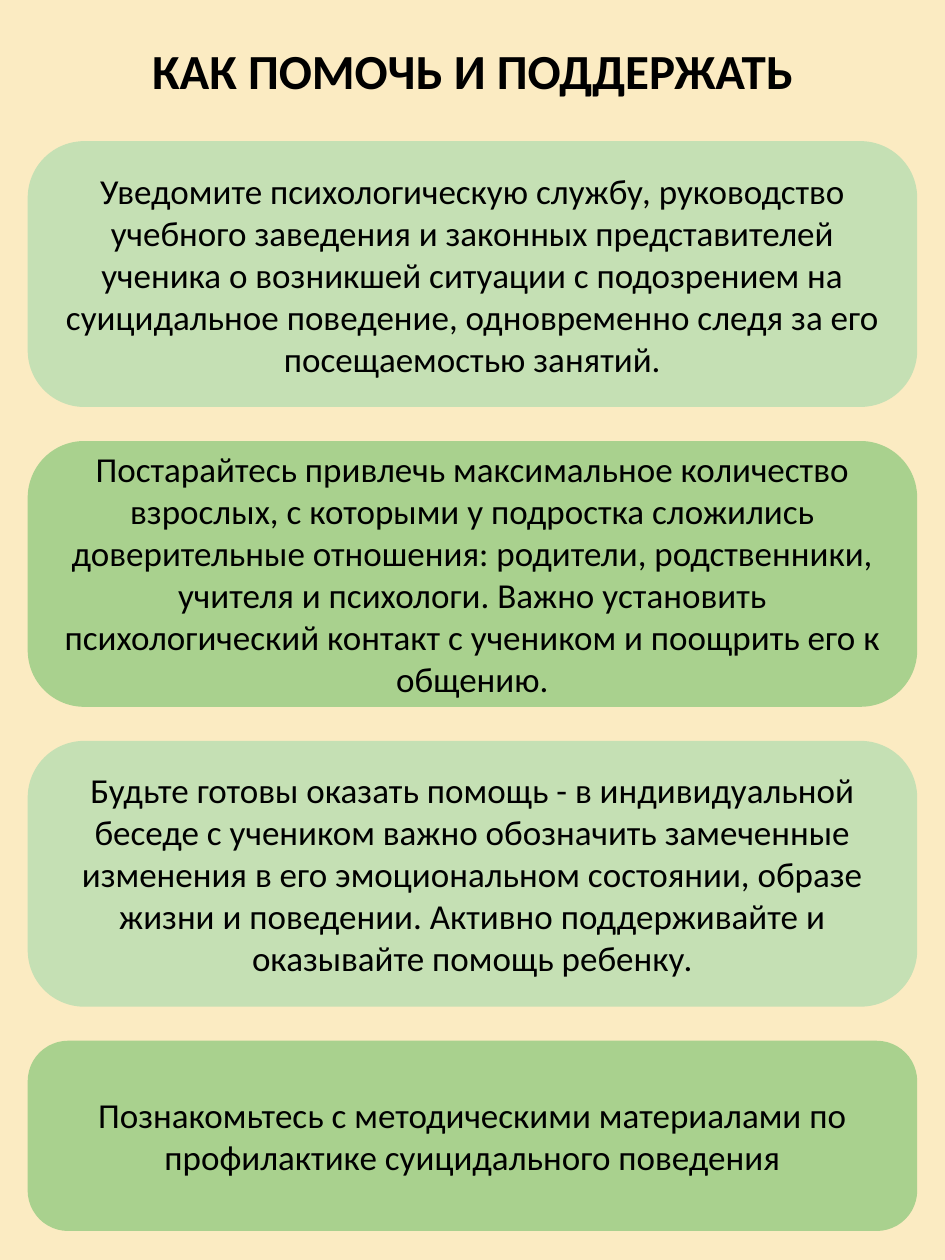
from lxml.etree import SubElement
from pptx import Presentation
from pptx.dml.color import RGBColor
from pptx.enum.shapes import MSO_SHAPE
from pptx.enum.text import MSO_ANCHOR, MSO_AUTO_SIZE, PP_ALIGN
from pptx.oxml.ns import qn
from pptx.util import Inches, Pt

COLOURS = {
    "background": "F3B10D",
    "light": "C5E0B4",
    "dark": "A9D18E",
    "text": "000000",
}
PAGE_WIDTH, PAGE_HEIGHT = 7.5, 10
MARGIN = 0.22
CONTENT_WIDTH = PAGE_WIDTH - 2 * MARGIN
TITLE_TOP, TITLE_HEIGHT = 0.27, 0.57
FIRST_CARD_TOP, CARD_GAP = 1.12, 0.27
CARD_CORNER = 0.213

TITLE = "КАК ПОМОЧЬ И ПОДДЕРЖАТЬ"
TITLE_FONT = {"name": "Calibri", "size": Pt(28), "bold": True}
CARD_FONT = {"name": "Calibri", "size": Pt(20)}

# Height, fill and text of each card, from top to bottom
CARDS = [
    (2.11, "light",
     "Уведомите психологическую службу, руководство учебного заведения "
     "и законных представителей ученика о возникшей ситуации с подозрением "
     "на суицидальное поведение, одновременно следя за его посещаемостью занятий."),
    (2.11, "dark",
     "Постарайтесь привлечь максимальное количество взрослых, с которыми "
     "у подростка сложились доверительные отношения: родители, родственники, "
     "учителя и психологи. Важно установить психологический контакт с учеником "
     "и поощрить его к общению."),
    (2.11, "light",
     "Будьте готовы оказать помощь - в индивидуальной беседе с учеником важно "
     "обозначить замеченные изменения в его эмоциональном состоянии, образе "
     "жизни и поведении. Активно поддерживайте и оказывайте помощь ребенку."),
    (1.51, "dark",
     "Познакомьтесь с методическими материалами по профилактике "
     "суицидального поведения"),
]


def colour(name):
    return RGBColor.from_string(COLOURS[name])


def content_area(top, height):
    """Return left, top, width and height of a row between the margins."""
    return [Inches(length) for length in (MARGIN, top, CONTENT_WIDTH, height)]


def set_background(page, opacity):
    fill = page.background.fill
    fill.solid()
    fill.fore_color.rgb = colour("background")
    colour_element = next(page.element.iter(qn("a:srgbClr")))
    SubElement(colour_element, qn("a:alpha"), val=str(opacity * 1000))


def write_text(shape, text, font_values):
    frame = shape.text_frame
    frame.word_wrap = True
    para = frame.paragraphs[0]
    para.alignment = PP_ALIGN.CENTER
    span = para.add_run()
    span.text = text
    for attribute, value in font_values.items():
        setattr(span.font, attribute, value)
    span.font.color.rgb = colour("text")


def add_card(page, top, height, fill_name, text):
    card = page.shapes.add_shape(MSO_SHAPE.ROUNDED_RECTANGLE,
                                 *content_area(top, height))
    card.adjustments[0] = CARD_CORNER
    card.shadow.inherit = False
    card.fill.solid()
    card.fill.fore_color.rgb = colour(fill_name)
    card.line.fill.background()
    card.text_frame.vertical_anchor = MSO_ANCHOR.MIDDLE
    write_text(card, text, CARD_FONT)


def add_title(page):
    box = page.shapes.add_textbox(*content_area(TITLE_TOP, TITLE_HEIGHT))
    box.text_frame.auto_size = MSO_AUTO_SIZE.SHAPE_TO_FIT_TEXT
    write_text(box, TITLE, TITLE_FONT)


def main():
    deck = Presentation()
    deck.slide_width = Inches(PAGE_WIDTH)
    deck.slide_height = Inches(PAGE_HEIGHT)
    page = deck.slides.add_slide(deck.slide_layouts[6])
    set_background(page, opacity=25)
    top = FIRST_CARD_TOP
    for height, fill_name, text in CARDS:
        add_card(page, top, height, fill_name, text)
        top += height + CARD_GAP
    add_title(page)
    deck.save("out.pptx")


if __name__ == "__main__":
    main()
